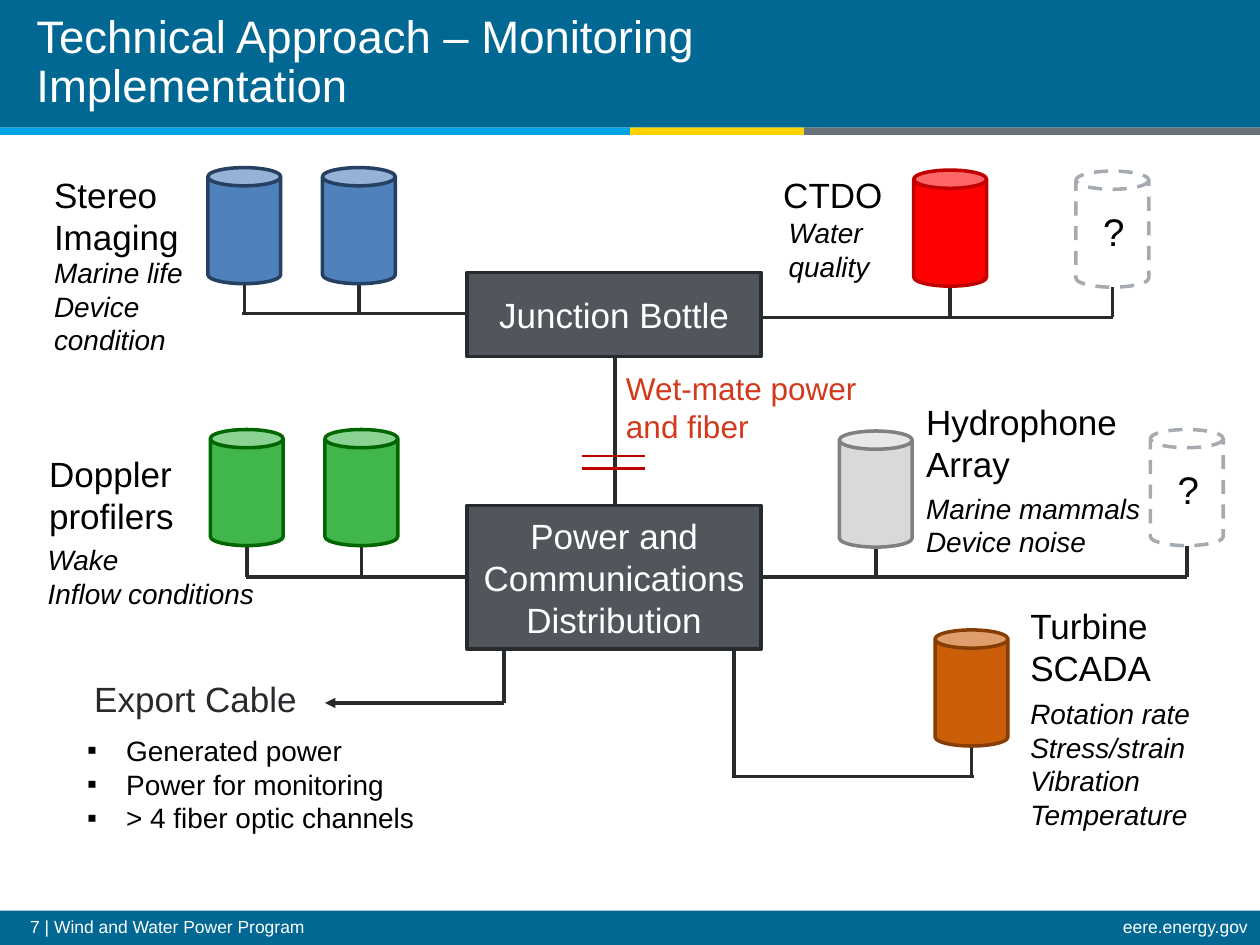
"""Build the monitoring implementation slide."""
from lxml import etree
from pptx import Presentation
from pptx import util as u
from pptx.dml.color import RGBColor
from pptx.enum import dml, shapes, text
from pptx.oxml import ns

COLOURS = {
    "band": "006892", "sky": "00A4E4", "yellow": "FFD200", "grey": "6A737B",
    "white": "FFFFFF", "black": "000000", "wire": "282B2E", "node": "50565C",
    "break": "C00000", "wet mate": "D23A1C", "spare": "A5ABB0",
    "blue": "4F81BD", "blue edge": "254061", "green": "40B64B", "green edge": "006600",
    "red": "FF0000", "red edge": "C00000", "silver": "D9D9D9", "silver edge": "808080",
    "orange": "CA5E09", "orange edge": "873E06",
}
CAN_WIDTH, CAN_HEIGHT = 1.47, 2.34
LEFT = text.PP_ALIGN.LEFT
CENTER = text.PP_ALIGN.CENTER
RIGHT = text.PP_ALIGN.RIGHT


def colour(name):
    """Return the named colour."""
    return RGBColor.from_string(COLOURS[name])


def place(item, left, top, width, height):
    """Move and size an object, in centimetres."""
    item.left, item.top = u.Cm(left), u.Cm(top)
    item.width, item.height = u.Cm(width), u.Cm(height)


def add_element(parent, tag, **attributes):
    """Append a drawing element to its parent."""
    return etree.SubElement(parent, ns.qn(tag), attributes)


def write(frame, lines, size=20, ink="black", italic=False, align=LEFT,
          spacing=1.0, bullet=None, anchor=text.MSO_ANCHOR.TOP, wrap=True):
    """Fill a text frame with one paragraph per line."""
    frame.word_wrap = wrap
    frame.auto_size = text.MSO_AUTO_SIZE.NONE
    frame.vertical_anchor = anchor
    for index, line in enumerate(lines):
        para = frame.paragraphs[0] if index == 0 else frame.add_paragraph()
        para.alignment = align
        para.line_spacing = spacing
        para.space_before = u.Pt(0)
        if bullet:
            properties = para._p.get_or_add_pPr()
            properties.set("marL", str(u.Cm(0.79)))
            properties.set("indent", str(-u.Cm(0.79)))
            add_element(properties, "a:buFont", typeface="Arial")
            add_element(properties, "a:buChar", char=bullet)
        span = para.add_run()
        span.text = line
        span.font.name, span.font.size = "Arial", u.Pt(size)
        span.font.italic = italic
        span.font.color.rgb = colour(ink)


def add_label(page, lines, left, top, width, height, **style):
    """Add a text box."""
    box = page.shapes.add_textbox(*map(u.Cm, (left, top, width, height)))
    write(box.text_frame, lines, **style)


def add_figure(page, kind, left, top, width, height, fill=None, edge=None):
    """Add a preset shape with optional fill and outline."""
    figure = page.shapes.add_shape(kind, *map(u.Cm, (left, top, width, height)))
    figure.shadow.inherit = False
    if fill:
        figure.fill.solid()
        figure.fill.fore_color.rgb = colour(fill)
    else:
        figure.fill.background()
    if edge:
        figure.line.color.rgb = colour(edge)
        figure.line.width = u.Pt(2)
    else:
        figure.line.fill.background()
    return figure


def add_band(page, left, top, width, height, fill):
    """Add a plain coloured band behind the placeholders."""
    band = add_figure(page, shapes.MSO_SHAPE.RECTANGLE, left, top, width, height, fill)
    band._element.getparent().insert(2, band._element)


def add_wire(page, x1, y1, x2, y2, ink="wire", weight=2, arrow=False):
    """Add a straight line, with an optional arrowhead at its start."""
    wire = page.shapes.add_connector(
        shapes.MSO_CONNECTOR.STRAIGHT, *map(u.Cm, (x1, y1, x2, y2)))
    wire.line.color.rgb = colour(ink)
    wire.line.width = u.Pt(weight)
    if arrow:
        add_element(wire.line._get_or_add_ln(), "a:headEnd", type="triangle")
    add_element(wire._element.spPr, "a:effectLst")


def add_sensor(page, left, top, bus, paint=None):
    """Add a sensor can with its drop to the bus; an unpainted one is a spare."""
    middle = left + CAN_WIDTH / 2
    add_wire(page, middle, top + CAN_HEIGHT, middle, bus)
    edge = f"{paint} edge" if paint else "spare"
    can = add_figure(page, shapes.MSO_SHAPE.CAN, left, top, CAN_WIDTH, CAN_HEIGHT, paint, edge)
    if not paint:
        can.line.dash_style = dml.MSO_LINE.DASH
        add_label(page, ["?"], left + 0.3, top + 0.61, 1.27, 1.19, size=22)


def add_node(page, name, top, height):
    """Add a central distribution box."""
    node = add_figure(page, shapes.MSO_SHAPE.RECTANGLE, 9.42, top, 5.92, height, "node", "wire")
    write(node.text_frame, [name], ink="white", align=CENTER, anchor=text.MSO_ANCHOR.MIDDLE)


def add_frame(page):
    """Add the header, footer and title."""
    add_band(page, 0, 0, 25.4, 2.57, "band")
    add_band(page, 0, 18.36, 25.4, 0.69, "band")
    left = 0
    for width, fill in ((12.7, "sky"), (3.5, "yellow"), (9.2, "grey")):
        add_band(page, left, 2.57, width, 0.15, fill)
        left += width
    footer = {"size": 10, "ink": "white", "spacing": 0.9}
    add_label(page, ["7 | Wind and Water Power Program"], 0.36, 18.39, 20.24, 0.66, **footer)
    add_label(page, ["eere.energy.gov"], 15.21, 18.39, 10.19, 0.66, align=RIGHT, **footer)
    title = page.shapes.title
    place(title, 0.48, 0, 15.72, 2.51)
    write(title.text_frame, ["Technical Approach – Monitoring Implementation"], size=26,
          ink="white", spacing=u.Pt(28), anchor=text.MSO_ANCHOR.MIDDLE)


def add_network(page):
    """Add the wires, sensors and distribution boxes."""
    for ends in ((4.88, 6.32, 9.4, 6.32), (15.37, 6.4, 22.43, 6.4),
                 (4.95, 11.63, 9.45, 11.63), (15.37, 11.63, 23.93, 11.63),
                 (12.4, 7.19, 12.4, 10.19), (10.16, 12.85, 10.16, 14.17),
                 (14.8, 12.85, 14.8, 15.65), (14.76, 15.65, 19.63, 15.65)):
        add_wire(page, *ends)
    add_wire(page, 6.55, 14.17, 10.16, 14.17, arrow=True)
    for y in (9.19, 9.45):
        add_wire(page, 11.73, y, 13, y, ink="break", weight=1.5)
    for sensor in ((4.19, 3.38, 6.32, "blue"), (6.5, 3.38, 6.32, "blue"),
                   (18.42, 3.43, 6.4, "red"), (21.69, 3.45, 6.4),
                   (4.24, 8.66, 11.63, "green"), (6.55, 8.66, 11.63, "green"),
                   (16.92, 8.69, 11.63, "silver"), (23.19, 8.66, 11.63),
                   (18.85, 12.7, 15.65, "orange")):
        add_sensor(page, *sensor)
    add_node(page, "Junction Bottle", 5.49, 1.7)
    add_node(page, "Power and Communications Distribution", 10.19, 2.9)


def add_labels(page):
    """Name the sensors, what they measure and the cables."""
    for name, *spot in (("Stereo Imaging", 0.84, 3.38, 3.61, 1.96),
                        ("Doppler profilers", 0.74, 8.99, 3.63, 1.96),
                        ("CTDO", 15.54, 3.38, 3.89, 1.12),
                        ("Hydrophone Array", 18.42, 7.95, 4.88, 1.96),
                        ("Turbine SCADA", 20.52, 12.07, 4.88, 1.96)):
        add_label(page, [name], *spot)
    for lines, *spot in ((["Marine life", "Device condition"], 0.84, 5.03, 3.7, 2.31),
                         (["Wake", "Inflow conditions"], 0.71, 10.82, 4.88, 1.63),
                         (["Water quality"], 15.65, 4.22, 2.34, 1.63),
                         (["Marine mammals", "Device noise"], 18.42, 9.78, 4.88, 1.63),
                         (["Rotation rate", "Stress/strain", "Vibration", "Temperature"],
                          20.52, 13.92, 4.88, 3)):
        add_label(page, lines, *spot, size=16, italic=True)
    add_label(page, ["Wet-mate power and fiber"], 12.37, 7.32, 5.21, 1.8,
              size=18, ink="wet mate")
    add_label(page, ["Export Cable"], 1.65, 13.54, 4.62, 1.12, ink="wire", wrap=False)
    body = page.placeholders[1]
    place(body, 1.5, 14.66, 7.75, 2.31)
    write(body.text_frame,
          ["Generated power", "Power for monitoring", "> 4 fiber optic channels"],
          size=16, bullet="▪")


def main():
    """Build and save the deck."""
    deck = Presentation()
    deck.slide_width, deck.slide_height = u.Cm(25.4), u.Cm(19.05)
    page = deck.slides.add_slide(deck.slide_layouts[1])
    add_frame(page)
    add_network(page)
    add_labels(page)
    deck.save("out.pptx")


if __name__ == "__main__":
    main()
